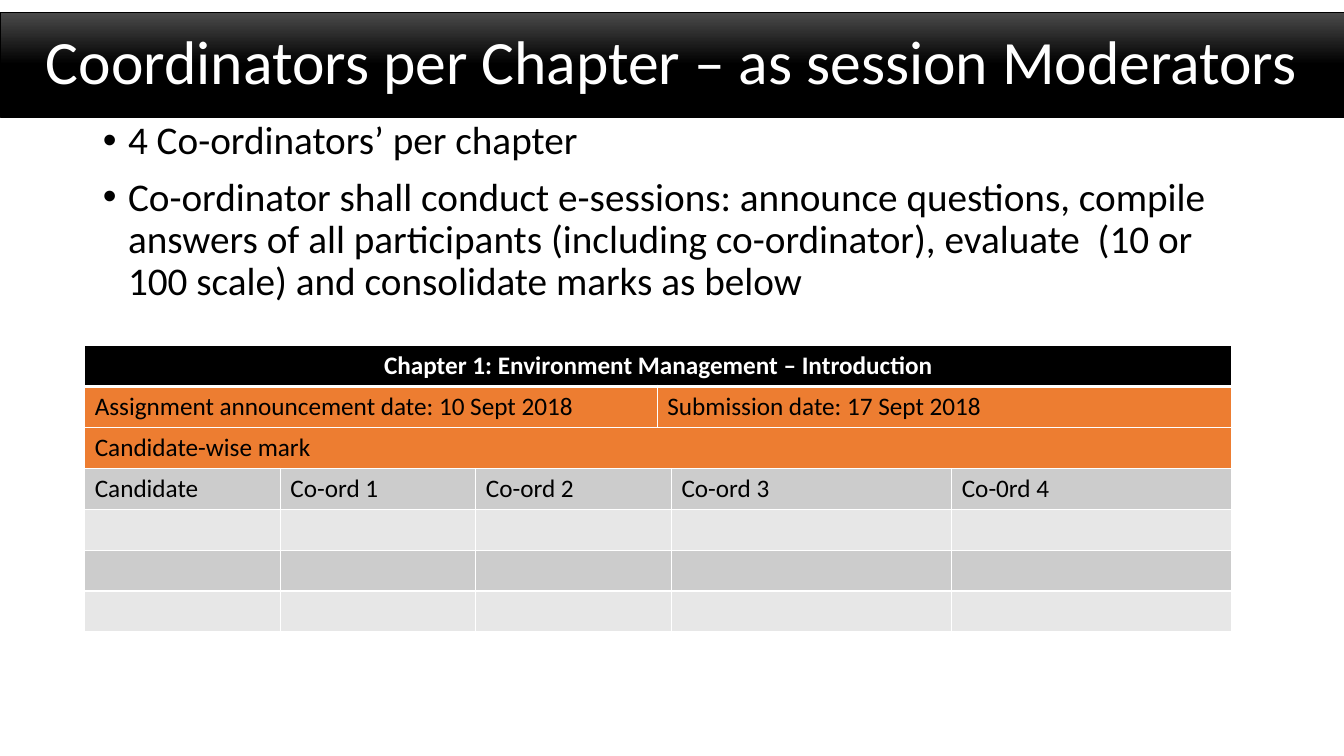
from lxml import etree
from pptx import Presentation
from pptx import util as u
from pptx.dml.color import RGBColor
from pptx.enum import text
from pptx.oxml import ns

BLACK = RGBColor(0x00, 0x00, 0x00)
CHARCOAL = RGBColor(0x4B, 0x4B, 0x4B)
WHITE = RGBColor(0xFF, 0xFF, 0xFF)
ORANGE = RGBColor(0xED, 0x7D, 0x31)
DARK_BAND = RGBColor(0xCC, 0xCC, 0xCC)
LIGHT_BAND = RGBColor(0xE7, 0xE7, 0xE7)

DUTIES = [
    "4 Co-ordinators’ per chapter",
    "Co-ordinator shall conduct e-sessions: announce questions, compile answers of all "
    "participants (including co-ordinator), evaluate  (10 or 100 scale) and consolidate "
    "marks as below",
]

# Each row: fill, then (text, columns spanned) for each cell
MARK_SPANS = (1, 1, 2, 1, 1)
MARK_HEADINGS = ("Candidate", "Co-ord 1", "Co-ord 2", "Co-ord 3", "Co-0rd 4")
BLANK_MARKS = [("", span) for span in MARK_SPANS]
MARK_SHEET = [
    (BLACK, [("Chapter 1: Environment Management – Introduction", 6)]),
    (ORANGE, [("Assignment announcement date: 10 Sept 2018", 3),
              ("Submission date: 17 Sept 2018", 3)]),
    (ORANGE, [("Candidate-wise mark", 6)]),
    (DARK_BAND, list(zip(MARK_HEADINGS, MARK_SPANS))),
    (LIGHT_BAND, BLANK_MARKS),
    (DARK_BAND, BLANK_MARKS),
    (LIGHT_BAND, BLANK_MARKS),
]
COLUMN_WIDTHS = (1.94, 1.94, 1.8, 0.14, 2.78, 2.78)


class SlideBuilder:
    """Holds the slide and its type style."""

    font_name = "Calibri"

    def __init__(self, slide):
        self.slide = slide

    def apply(self, target, values):
        for attribute, value in values.items():
            setattr(target, attribute, value)

    def place(self, shape, left, top, width, height):
        self.apply(shape, {"left": u.Inches(left), "top": u.Inches(top),
                           "width": u.Inches(width), "height": u.Inches(height)})

    def add_wording(self, paragraph, wording, size, color, bold=False, **layout):
        run = paragraph.add_run()
        run.text = wording
        self.apply(run.font, {"name": self.font_name, "size": u.Pt(size), "bold": bold})
        run.font.color.rgb = color
        self.apply(paragraph, layout)

    def title(self, wording, *box):
        banner = self.slide.shapes.title
        self.place(banner, *box)
        banner.fill.gradient()
        banner.fill.gradient_angle = 270
        stops = banner.fill.gradient_stops
        for stop, position, color in zip(stops, (0, 0.5), (CHARCOAL, BLACK)):
            stop.position = position
            stop.color.rgb = color
        banner.line.color.rgb = BLACK
        banner.line.width = u.Pt(0.5)
        self.apply(banner.text_frame, {"auto_size": text.MSO_AUTO_SIZE.NONE,
                                       "vertical_anchor": text.MSO_ANCHOR.MIDDLE})
        self.add_wording(banner.text_frame.paragraphs[0], wording, 44, WHITE,
                         alignment=text.PP_ALIGN.CENTER, line_spacing=0.9)

    def bullets(self, items, *box):
        body = self.slide.placeholders[1]
        self.place(body, *box)
        frame = body.text_frame
        frame.auto_size = text.MSO_AUTO_SIZE.NONE
        for index, item in enumerate(items):
            paragraph = frame.add_paragraph() if index else frame.paragraphs[0]
            self.add_wording(paragraph, item, 28, BLACK,
                             line_spacing=0.9, space_before=u.Pt(10))
            properties = paragraph._p.get_or_add_pPr()
            properties.set("marL", str(u.Inches(0.25)))
            properties.set("indent", str(-u.Inches(0.25)))
            etree.SubElement(properties, ns.qn("a:buFont"), typeface="Arial")
            etree.SubElement(properties, ns.qn("a:buChar"), char="•")

    def border(self, cell, widths):
        properties = cell._tc.get_or_add_tcPr()
        for index, (side, width) in enumerate(zip("LRTB", widths)):
            line = etree.Element(ns.qn(f"a:ln{side}"), w=str(u.Pt(width)))
            fill = etree.SubElement(line, ns.qn("a:solidFill"))
            etree.SubElement(fill, ns.qn("a:srgbClr"), val=str(WHITE))
            properties.insert(index, line)

    def table(self, rows, column_widths, *box):
        lengths = [u.Inches(value) for value in box]
        grid = self.slide.shapes.add_table(len(rows), len(column_widths), *lengths).table
        for column, width in zip(grid.columns, column_widths):
            column.width = u.Inches(width)
        for row, (fill, entries) in enumerate(rows):
            # Fill and rule the whole row, with a heavy line under the heading
            for column in range(len(column_widths)):
                cell = grid.cell(row, column)
                cell.fill.solid()
                cell.fill.fore_color.rgb = fill
                self.border(cell, (1, 1, 3 if row == 1 else 1, 3 if row == 0 else 1))
            # Merge and fill in the entries
            start = 0
            for wording, span in entries:
                cell = grid.cell(row, start)
                if span > 1:
                    cell.merge(grid.cell(row, start + span - 1))
                if wording:
                    heading = row == 0
                    align = text.PP_ALIGN.CENTER if heading else text.PP_ALIGN.LEFT
                    self.add_wording(cell.text_frame.paragraphs[0], wording, 18,
                                     WHITE if heading else BLACK, heading, alignment=align)
                start += span


def main():
    deck = Presentation()
    deck.slide_width, deck.slide_height = u.Inches(13.33), u.Inches(7.5)
    builder = SlideBuilder(deck.slides.add_slide(deck.slide_layouts[1]))

    # Title banner
    builder.title("Coordinators per Chapter – as session Moderators", 0, 0.12, 13.33, 1.04)
    # Coordinator duties
    builder.bullets(DUTIES, 0.92, 1.15, 11.5, 5.61)
    # Mark sheet
    builder.table(MARK_SHEET, COLUMN_WIDTHS, 0.84, 3.43, 11.38, 2.83)

    deck.save("out.pptx")


if __name__ == "__main__":
    main()
